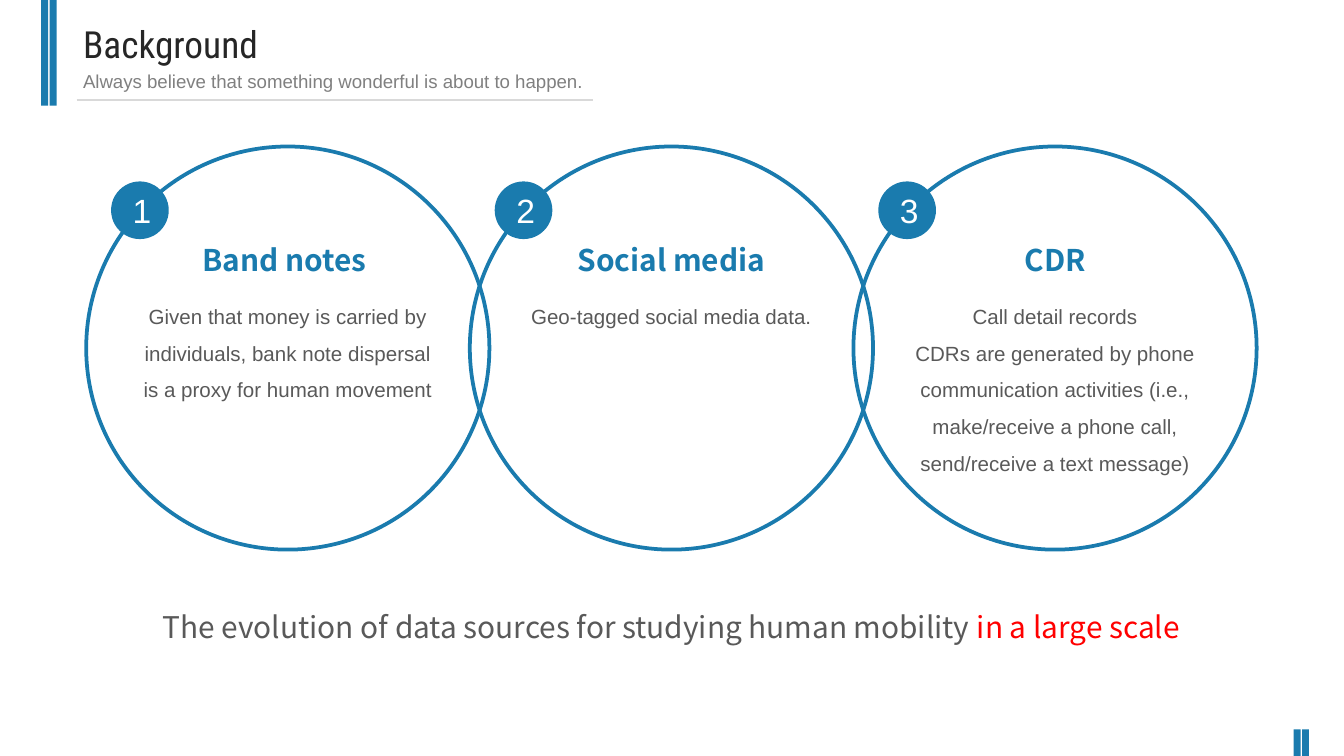
from dataclasses import dataclass

from lxml import etree
from pptx import Presentation
from pptx.dml.color import RGBColor
from pptx.enum.shapes import MSO_CONNECTOR, MSO_SHAPE
from pptx.enum.text import MSO_ANCHOR, PP_ALIGN
from pptx.oxml.ns import qn
from pptx.util import Cm, Pt

LEFT, CENTER = PP_ALIGN.LEFT, PP_ALIGN.CENTER
MIDDLE = MSO_ANCHOR.MIDDLE
OVAL, RECTANGLE = MSO_SHAPE.OVAL, MSO_SHAPE.RECTANGLE
STRAIGHT = MSO_CONNECTOR.STRAIGHT

BLUE, GRAY = "1A7BAE", "595959"
SANS, DISPLAY, TITLE_FONT = "Arial", "Noto Sans CJK SC", "Roboto Condensed"

# All lengths are in centimetres
SLIDE_W, SLIDE_H = 25.4, 14.29
CIRCLE_LEFT, CIRCLE_TOP, CIRCLE_SIZE, CIRCLE_PITCH = 1.63, 2.77, 7.62, 7.25
BADGE_SIZE = 1.09
BODY_W = 6.0
STRIPE_W, STRIPE_PITCH = 0.13, 0.16


@dataclass
class Box:
    left: float
    top: float
    width: float
    height: float

    def lengths(self):
        return Cm(self.left), Cm(self.top), Cm(self.width), Cm(self.height)


@dataclass
class Style:
    size: float
    font: str
    color: str
    bold: bool = False


@dataclass
class DataSource:
    heading: str
    heading_width: float
    body: list[str]
    body_height: float


SOURCES = [
    DataSource("Band notes ", 3.91, [
        "Given that money is carried by individuals, bank note dispersal "
        "is a proxy for human movement"], 2.29),
    DataSource("Social media", 4.14, ["Geo-tagged social media data."], 0.86),
    DataSource("CDR", 1.75, [
        "Call detail records",
        "CDRs are generated by phone communication activities (i.e., "
        "make/receive a phone call, send/receive a text message)"], 3.78),
]

TITLE = Style(20, TITLE_FONT, "262626")
SUBTITLE = Style(10, SANS, "808080")
HEADING = Style(16, DISPLAY, BLUE, bold=True)
BODY = Style(11, SANS, GRAY)
NUMBER = Style(18, SANS, "FFFFFF")
SUMMARY = Style(16, DISPLAY, GRAY)
EMPHASIS = Style(16, DISPLAY, "FF0000")


def rgb(color: str) -> RGBColor:
    return RGBColor.from_string(color)


def add_run(paragraph, text: str, style: Style) -> None:
    run = paragraph.add_run()
    run.text = text
    run.font.size = Pt(style.size)
    run.font.name = style.font
    run.font.bold = style.bold
    run.font.color.rgb = rgb(style.color)


def add_text(slide, box: Box, paragraphs: list[list[tuple[str, Style]]],
             align=LEFT, spacing: float = 1.0, wrap: bool = True) -> None:
    """Each paragraph is a list of (text, style) runs."""
    frame = slide.shapes.add_textbox(*box.lengths()).text_frame
    frame.word_wrap = wrap
    for index, runs in enumerate(paragraphs):
        paragraph = frame.add_paragraph() if index else frame.paragraphs[0]
        paragraph.alignment = align
        paragraph.line_spacing = spacing
        for text, style in runs:
            add_run(paragraph, text, style)


def add_filled(slide, kind, box: Box):
    shape = slide.shapes.add_shape(kind, *box.lengths())
    shape.shadow.inherit = False
    shape.fill.solid()
    shape.fill.fore_color.rgb = rgb(BLUE)
    shape.line.fill.background()
    return shape


def add_ring(slide, box: Box) -> None:
    ring = slide.shapes.add_shape(OVAL, *box.lengths())
    ring.shadow.inherit = False
    ring.fill.background()
    ring.line.color.rgb = rgb(BLUE)
    ring.line.width = Pt(2)


def add_badge(slide, box: Box, number: int) -> None:
    frame = add_filled(slide, OVAL, box).text_frame
    frame.vertical_anchor = MIDDLE
    frame.paragraphs[0].alignment = CENTER
    add_run(frame.paragraphs[0], str(number), NUMBER)


def add_stripes(slide, left: float, top: float, height: float) -> None:
    for index in range(2):
        add_filled(slide, RECTANGLE,
                   Box(left + index * STRIPE_PITCH, top, STRIPE_W, height))


def add_rule(slide, left: float, right: float, y: float) -> None:
    rule = slide.shapes.add_connector(STRAIGHT, Cm(left), Cm(y), Cm(right), Cm(y))
    rule.line.color.rgb = rgb("D9D9D9")
    rule.line.width = Pt(0.75)
    etree.SubElement(rule.element.spPr, qn("a:effectLst"))


def add_source(slide, index: int, source: DataSource) -> None:
    left = CIRCLE_LEFT + index * CIRCLE_PITCH
    center = left + CIRCLE_SIZE / 2
    add_ring(slide, Box(left, CIRCLE_TOP, CIRCLE_SIZE, CIRCLE_SIZE))
    add_text(slide, Box(center - BODY_W / 2, 5.38, BODY_W, source.body_height),
             [[(text, BODY)] for text in source.body], CENTER, spacing=1.5)
    add_text(slide, Box(center - source.heading_width / 2, 4.45,
                        source.heading_width, 0.94),
             [[(source.heading, HEADING)]], CENTER, wrap=False)
    add_badge(slide, Box(left + 0.47, 3.43, BADGE_SIZE, BADGE_SIZE), index + 1)


def main() -> None:
    deck = Presentation()
    deck.slide_width, deck.slide_height = Cm(SLIDE_W), Cm(SLIDE_H)
    slide = deck.slides.add_slide(deck.slide_layouts[6])

    add_stripes(slide, 0.78, 0, 2.0)
    add_stripes(slide, 24.45, 13.79, 0.5)
    add_rule(slide, 1.45, 11.2, 1.89)
    add_text(slide, Box(1.32, 0.28, 10.74, 1.12), [[("Background", TITLE)]])
    add_text(slide, Box(1.32, 1.19, 10.74, 0.69), [[
        ("Always believe that something wonderful is about to happen.", SUBTITLE)]])

    for index, source in enumerate(SOURCES):
        add_source(slide, index, source)

    row_width = CIRCLE_SIZE + (len(SOURCES) - 1) * CIRCLE_PITCH
    add_text(slide, Box(CIRCLE_LEFT, 11.05, row_width, 1.17), [[
        ("The evolution of data sources for studying human mobility ", SUMMARY),
        ("in a large scale", EMPHASIS)]], CENTER, spacing=1.5)

    deck.save("out.pptx")


if __name__ == "__main__":
    main()
